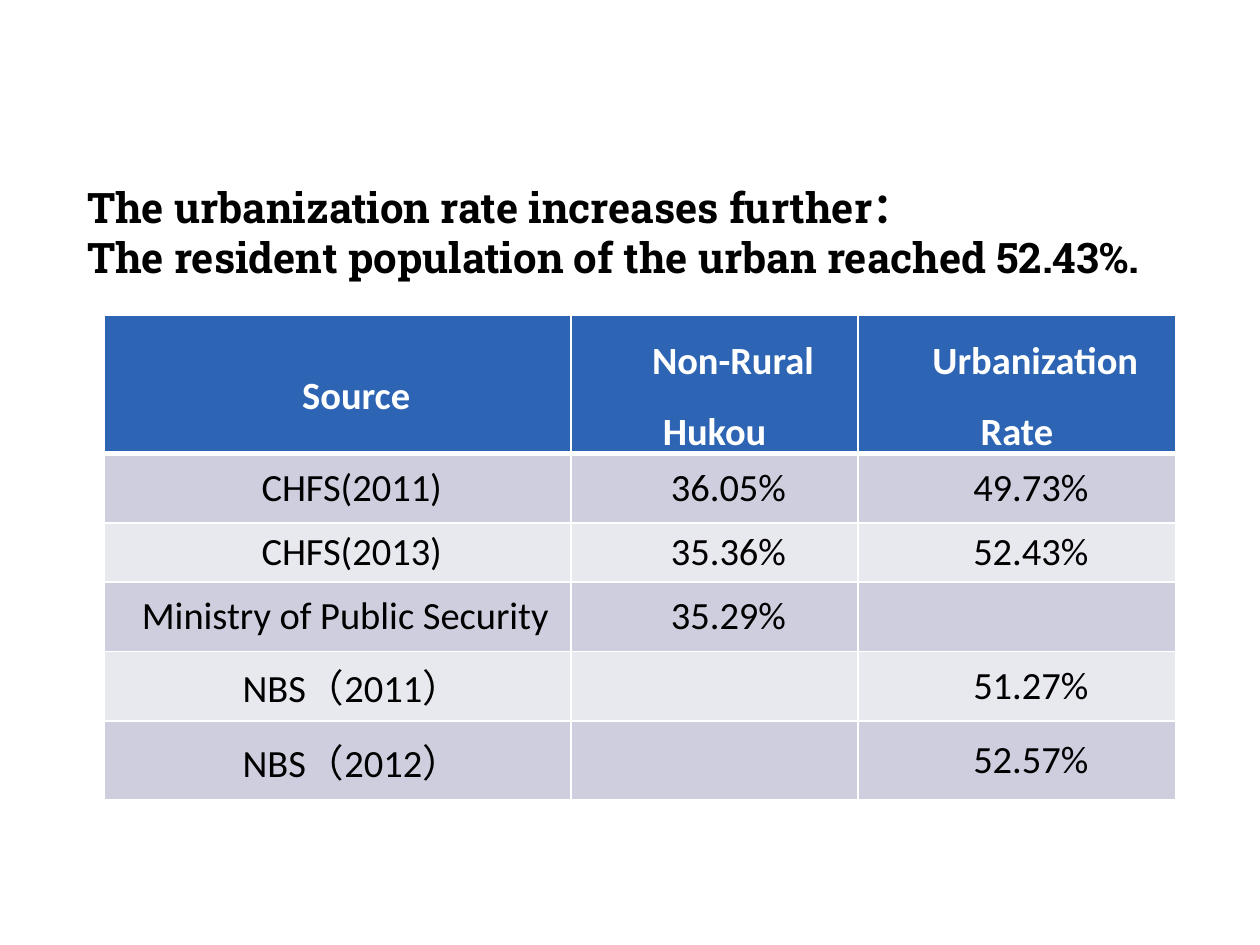
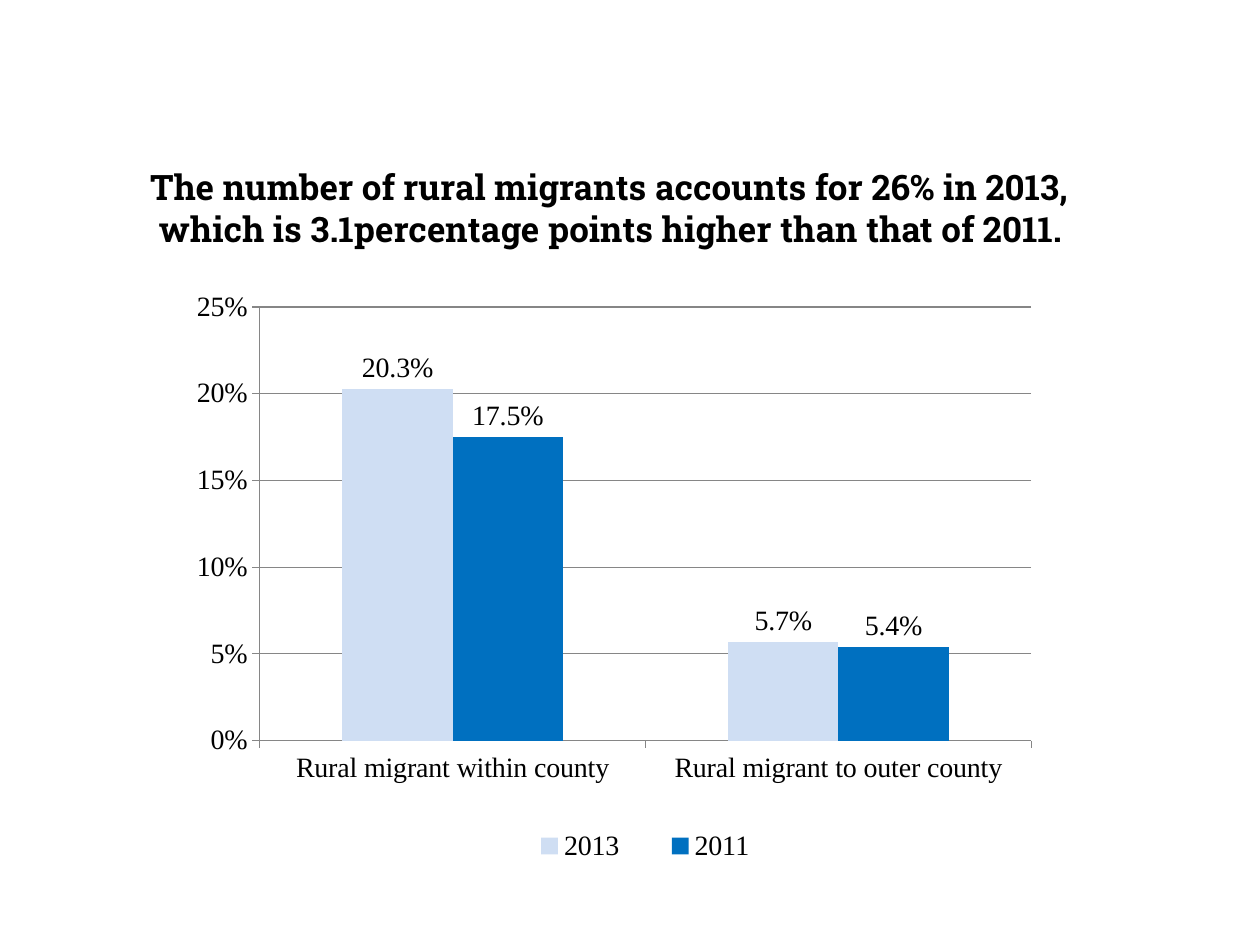
from dataclasses import dataclass

from pptx import Presentation
from pptx.chart.data import CategoryChartData
from pptx.dml.color import RGBColor
from pptx.enum.chart import XL_CHART_TYPE as ChartType
from pptx.enum.chart import XL_LABEL_POSITION as LabelPosition
from pptx.enum.chart import XL_LEGEND_POSITION as LegendPosition
from pptx.enum.chart import XL_TICK_MARK as TickMark
from pptx.enum.text import MSO_ANCHOR as Anchor
from pptx.enum.text import MSO_AUTO_SIZE as AutoSize
from pptx.enum.text import PP_ALIGN as Align
from pptx.oxml import parse_xml
from pptx.oxml.ns import nsdecls, qn
from pptx.util import Cm, Pt


@dataclass(frozen=True)
class Theme:
    # Colours
    text: str = "000000"
    white: str = "FFFFFF"
    header_fill: str = "2D65B4"
    dark_band: str = "CECEDE"
    light_band: str = "E8E8EF"
    axis: str = "868686"
    series: tuple = ("CFDEF3", "0070C0")
    # Fonts
    title_font: str = "Roboto Slab"
    table_font: str = "Calibri"
    chart_font: str = "Times New Roman"
    # Sizes in points
    table_size: int = 22
    chart_size: int = 16
    thin_border: int = 1
    thick_border: int = 3


THEME = Theme()

SURVEY_ROWS = [
    ("Source", "Non-Rural Hukou", "Urbanization Rate"),
    ("CHFS(2011)", "36.05%", "49.73%"),
    ("CHFS(2013)", "35.36%", "52.43%"),
    ("Ministry of Public Security", "35.29%", ""),
    ("NBS（2011）", "", "51.27%"),
    ("NBS（2012）", "", "52.57%"),
]
COLUMN_WIDTHS = (9.4, 5.79, 6.4)
ROW_HEIGHTS = (1.8, 1.4, 1.19, 1.4, 1.4, 1.6)

MIGRANT_GROUPS = ("Rural migrant within county", "Rural migrant to outer county")
MIGRANT_SHARES = {"2013": (0.203, 0.057), "2011": (0.175, 0.054)}


def colour(code):
    return RGBColor.from_string(code)


def style_font(font, name, size, code=THEME.text, bold=False):
    font.name = name
    font.size = Pt(size)
    font.bold = bold
    font.color.rgb = colour(code)


# Titles
def add_titled_page(deck, lines, left, top, width, height, size, align):
    page = deck.slides.add_slide(deck.slide_layouts.get_by_name("Title Only"))
    box = page.shapes.title
    box.left, box.top, box.width, box.height = map(Cm, (left, top, width, height))
    frame = box.text_frame
    frame.text = "\n".join(lines)
    frame.word_wrap = True
    frame.auto_size = AutoSize.SHAPE_TO_FIT_TEXT
    frame.vertical_anchor = Anchor.TOP
    for para in frame.paragraphs:
        para.alignment = align
        for span in para.runs:
            style_font(span.font, THEME.title_font, size, bold=True)
    return page


# Table
def set_borders(cell, top, bottom):
    sides = (("L", THEME.thin_border), ("R", THEME.thin_border), ("T", top), ("B", bottom))
    properties = cell._tc.get_or_add_tcPr()
    for index, (side, points) in enumerate(sides):
        line = parse_xml(
            f'<a:ln{side} {nsdecls("a")} w="{Pt(points)}"><a:solidFill>'
            f'<a:srgbClr val="{THEME.white}"/></a:solidFill></a:ln{side}>'
        )
        properties.insert(index, line)


def fill_cell(cell, text, row):
    is_header = row == 0
    band = THEME.dark_band if row % 2 else THEME.light_band
    cell.fill.solid()
    cell.fill.fore_color.rgb = colour(THEME.header_fill if is_header else band)
    # The rule under the header is thicker than the others
    set_borders(
        cell,
        top=THEME.thick_border if row == 1 else THEME.thin_border,
        bottom=THEME.thick_border if is_header else THEME.thin_border,
    )
    if not text:
        return
    cell.vertical_anchor = Anchor.MIDDLE
    cell.margin_left = cell.margin_right = Cm(0.19)
    cell.margin_top = cell.margin_bottom = 0
    cell.text = text
    para = cell.text_frame.paragraphs[0]
    para.alignment = Align.CENTER
    para._p.get_or_add_pPr().set("indent", str(Cm(0.74 if is_header else 0.56)))
    if is_header:
        para.line_spacing = 1.5
    style_font(
        para.runs[0].font,
        THEME.table_font,
        THEME.table_size,
        THEME.white if is_header else THEME.text,
        is_header,
    )


def add_survey_table(page, left, top):
    table = page.shapes.add_table(
        len(SURVEY_ROWS), len(COLUMN_WIDTHS), Cm(left), Cm(top),
        Cm(sum(COLUMN_WIDTHS)), Cm(sum(ROW_HEIGHTS)),
    ).table
    table.horz_banding = False
    for column, width in zip(table.columns, COLUMN_WIDTHS):
        column.width = Cm(width)
    for row, (texts, height) in enumerate(zip(SURVEY_ROWS, ROW_HEIGHTS)):
        table.rows[row].height = Cm(height)
        for column, text in enumerate(texts):
            fill_cell(table.cell(row, column), text, row)
    # The longest source name is justified
    table.cell(3, 0).text_frame.paragraphs[0].alignment = Align.JUSTIFY


# Chart
def place_part(element, index, x, y, width, height, inner=False):
    """Give a chart part a fixed place, as fractions of the chart."""
    old_layout = element.find(qn("c:layout"))
    if old_layout is not None:
        element.remove(old_layout)
    target = '<c:layoutTarget val="inner"/>' if inner else ""
    element.insert(index, parse_xml(
        f'<c:layout {nsdecls("c")}><c:manualLayout>{target}'
        '<c:xMode val="edge"/><c:yMode val="edge"/>'
        f'<c:x val="{x}"/><c:y val="{y}"/><c:w val="{width}"/><c:h val="{height}"/>'
        "</c:manualLayout></c:layout>"
    ))


def style_axis(axis):
    axis.major_tick_mark = TickMark.OUTSIDE
    axis.minor_tick_mark = TickMark.NONE
    axis.format.line.color.rgb = colour(THEME.axis)
    style_font(axis.tick_labels.font, THEME.chart_font, THEME.chart_size)


def style_series(series, code):
    series.format.fill.solid()
    series.format.fill.fore_color.rgb = colour(code)
    series.invert_if_negative = False
    labels = series.data_labels
    labels.show_value = True
    labels.number_format = "0.0%"
    labels.number_format_is_linked = False
    labels.position = LabelPosition.OUTSIDE_END
    style_font(labels.font, THEME.chart_font, THEME.chart_size)


def add_migrant_chart(page, left, top, width, height):
    data = CategoryChartData(number_format="0.0%")
    data.categories = MIGRANT_GROUPS
    for year, shares in MIGRANT_SHARES.items():
        data.add_series(year, shares)
    chart = page.shapes.add_chart(
        ChartType.COLUMN_CLUSTERED, Cm(left), Cm(top), Cm(width), Cm(height), data
    ).chart
    chart.has_title = False
    style_font(chart.font, THEME.chart_font, THEME.chart_size)

    # Columns
    plot = chart.plots[0]
    plot.gap_width = 150
    plot.overlap = 0
    plot.vary_by_categories = False
    for series, code in zip(plot.series, THEME.series):
        style_series(series, code)

    # Axes
    style_axis(chart.category_axis)
    values = chart.value_axis
    style_axis(values)
    values.minimum_scale, values.maximum_scale, values.major_unit = 0, 0.25, 0.05
    values.tick_labels.number_format = "0%"
    values.tick_labels.number_format_is_linked = False
    values.major_gridlines.format.line.color.rgb = colour(THEME.axis)

    # Legend below the plot
    chart.has_legend = True
    legend = chart.legend
    legend.position = LegendPosition.BOTTOM
    legend.include_in_layout = False
    style_font(legend.font, THEME.chart_font, THEME.chart_size)

    place_part(chart._chartSpace.chart.plotArea, 0, 0.09, 0.04, 0.81, 0.74, inner=True)
    place_part(legend._element, 1, 0.34, 0.92, 0.31, 0.08)


def main():
    deck = Presentation()
    deck.slide_width, deck.slide_height = Cm(25.4), Cm(19.05)

    # Urbanization rate
    page = add_titled_page(
        deck,
        ("The urbanization rate increases further：",
         "The resident population of the urban reached 52.43%."),
        1.5, 3.53, 22.58, 2.31, size=24, align=Align.LEFT,
    )
    add_survey_table(page, 2.11, 6.35)

    # Rural migrants
    page = add_titled_page(
        deck,
        ("The number of rural migrants accounts for 26% in 2013,",
         " which is 3.1percentage points higher than that of 2011."),
        2.77, 3.2, 19.94, 1.96, size=20, align=Align.JUSTIFY,
    )
    add_migrant_chart(page, 3.51, 5.72, 19.2, 11.81)

    deck.save("out.pptx")


if __name__ == "__main__":
    main()
